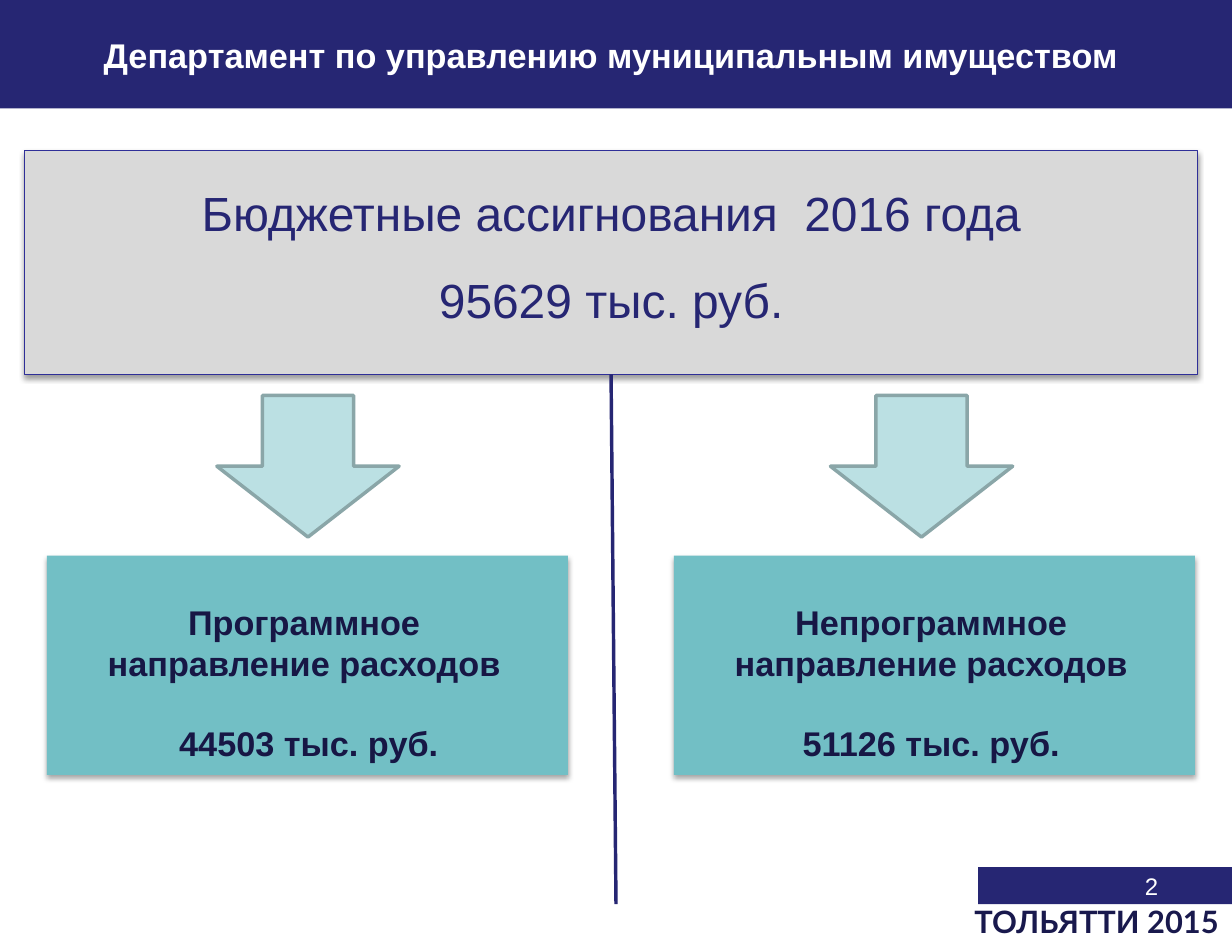
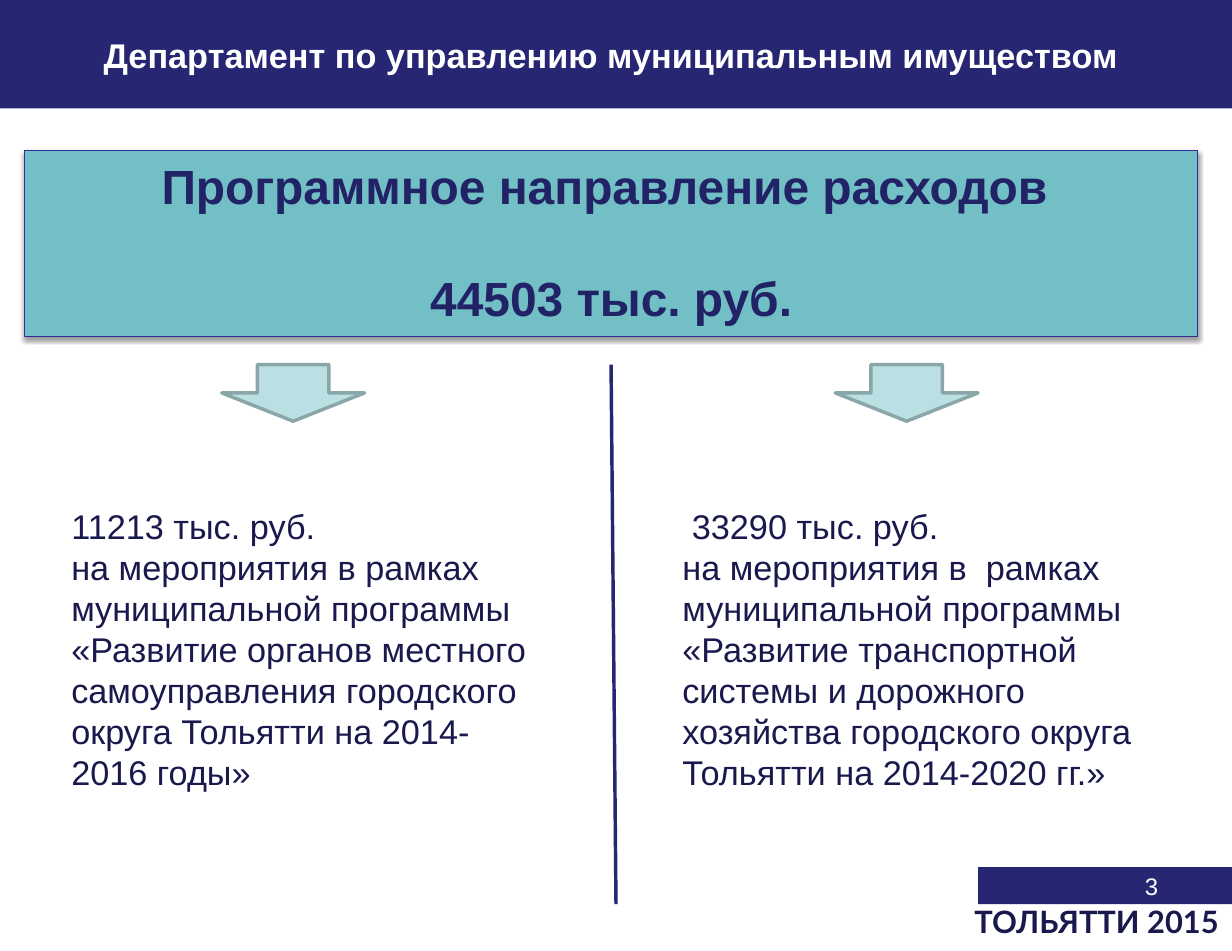
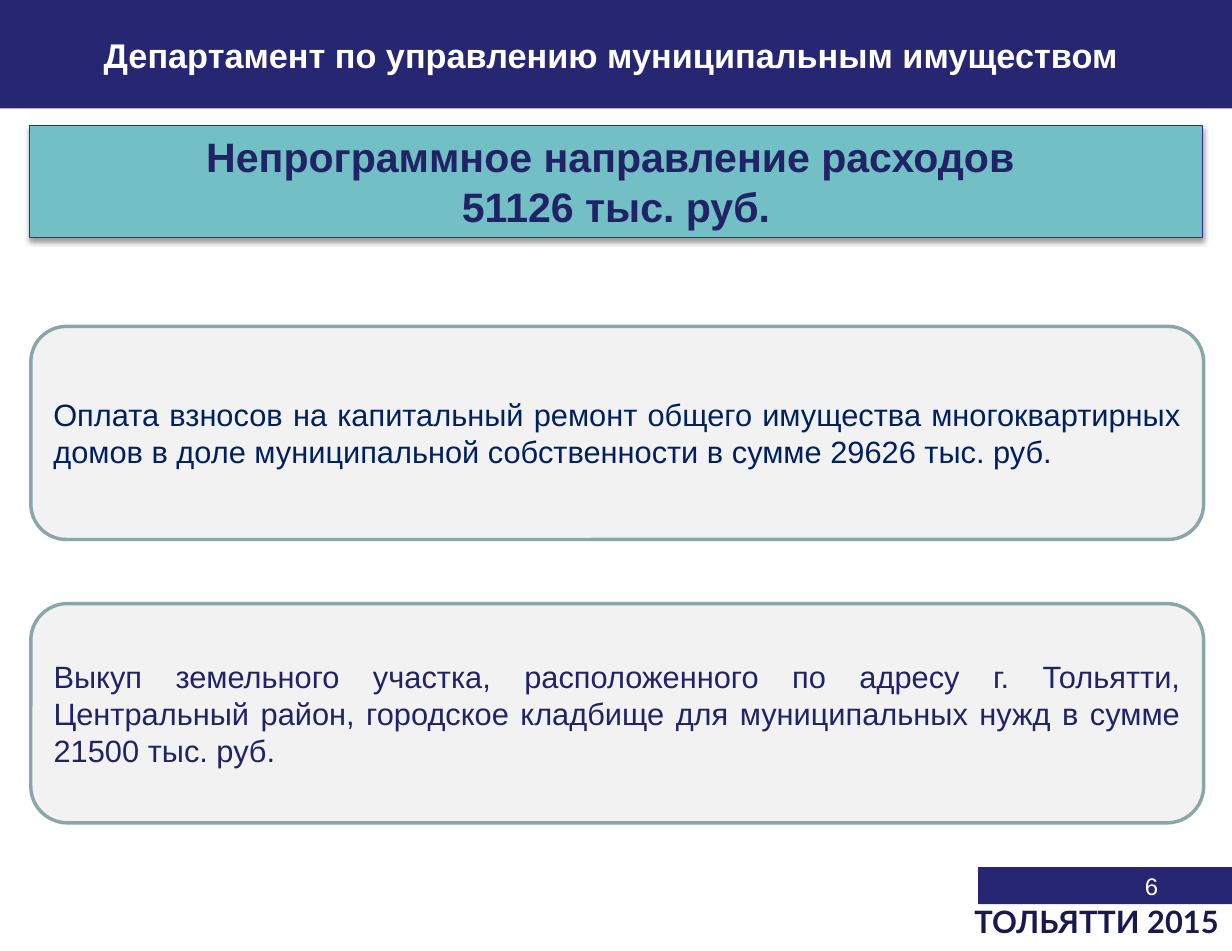
import pptx
import pptx.util
import pptx.dml.color
import pptx.enum.shapes
import pptx.enum.text
from lxml import etree

KIND = pptx.enum.shapes.MSO_SHAPE
ALIGN = pptx.enum.text.PP_ALIGN
ANCHOR = pptx.enum.text.MSO_ANCHOR
Inches = pptx.util.Inches
Pt = pptx.util.Pt

NAVY, TEAL, ICE, STEEL = "262673", "72BFC5", "BBE0E3", "8AA6A8"
EDGE, INK, DARK, HEAD = "2F2F98", "19194D", "171745", "222267"
GREY, PALE, BLUE, WHITE = "D9D9D9", "F2F2F2", "002060", "FFFFFF"

W, H = 10, 7.72
SIDE, WIDE = 0.2, 9.52
MID = SIDE + WIDE / 2
STEP = 4.98  # distance between the arrows of the two columns
FOOT = 7.34  # lower edge of the page-number band

TITLE = "Департамент по управлению муниципальным имуществом"
MARK = "ТОЛЬЯТТИ 2015"
TOTAL = ["Бюджетные ассигнования  2016 года", "95629 тыс. руб."]
PARTS = [
    (0.38, ["Программное", "направление расходов", " 44503 тыс. руб."]),
    (5.47, ["Непрограммное", "направление расходов", "51126 тыс. руб."]),
]
PROGRAM = ["Программное направление расходов ", "44503 тыс. руб."]
PLANS = [
    (0.48, 3.16, [
        "11213 тыс. руб.",
        "на мероприятия в рамках муниципальной программы «Развитие органов "
        "местного самоуправления городского округа Тольятти на 2014-2016 годы»",
    ]),
    (5.44, 2.93, [
        " 33290 тыс. руб.",
        "на мероприятия в  рамках муниципальной программы «Развитие "
        "транспортной системы и дорожного хозяйства городского округа "
        "Тольятти на 2014-2020 гг.»",
    ]),
]
OTHER = ["Непрограммное направление расходов ", "51126 тыс. руб."]
COSTS = [
    (2.65, 1.73, BLUE,
     "Оплата взносов на капитальный ремонт общего имущества многоквартирных "
     "домов в доле муниципальной собственности в сумме 29626 тыс. руб."),
    (4.9, 1.78, HEAD,
     "Выкуп земельного участка, расположенного по адресу г. Тольятти, "
     "Центральный район, городское кладбище для муниципальных нужд в сумме "
     "21500 тыс. руб."),
]


def paint(color, value):
    """Set a fill, line or font colour from a hex string."""
    color.rgb = pptx.dml.color.RGBColor.from_string(value)


def effect(shape, blur=0, dist=0, alpha=0):
    """Give the shape a soft shadow below, or none when blur is 0."""
    ns = "http://schemas.openxmlformats.org/drawingml/2006/main"
    inner = ""
    if blur:
        inner = (f'<a:outerShdw blurRad="{Pt(blur)}" dist="{Pt(dist)}" dir="5400000" '
                 f'rotWithShape="0"><a:srgbClr val="000000">'
                 f'<a:alpha val="{alpha * 1000}"/></a:srgbClr></a:outerShdw>')
    props = shape._element.spPr
    for old in props.findall(f"{{{ns}}}effectLst"):
        props.remove(old)
    props.append(etree.fromstring(f'<a:effectLst xmlns:a="{ns}">{inner}</a:effectLst>'))


def write(shape, lines, size=20, color=INK, bold=False, font="Arial",
          align=ALIGN.LEFT, anchor=ANCHOR.TOP, pad=(0.1, 0.05, 0.1, 0.05),
          pitch=None, gap=0):
    """Fill a shape with paragraphs; gap is the space before the last one."""
    frame = shape.text_frame
    frame.word_wrap = True
    frame.vertical_anchor = anchor
    (frame.margin_left, frame.margin_top,
     frame.margin_right, frame.margin_bottom) = map(Inches, pad)
    for i, line in enumerate(lines):
        para = frame.add_paragraph() if i else frame.paragraphs[0]
        para.alignment = align
        if pitch:
            para.line_spacing = pitch
        if gap and i == len(lines) - 1:
            para.space_before = Pt(gap)
        run = para.add_run()
        run.text = line
        run.font.name, run.font.size, run.font.bold = font, Pt(size), bold
        paint(run.font.color, color)


def block(slide, at, fill, kind=KIND.RECTANGLE, line=None, weight=2, shade=None):
    shape = slide.shapes.add_shape(kind, *map(Inches, at))
    shape.shadow.inherit = False
    shape.fill.solid()
    paint(shape.fill.fore_color, fill)
    if line:
        paint(shape.line.color, line)
        shape.line.width = Pt(weight)
    else:
        shape.line.fill.background()
    if shade:
        effect(shape, *shade)
    return shape


def label(slide, at, lines, **style):
    write(slide.shapes.add_textbox(*map(Inches, at)), lines, **style)


def banner(slide, at, lines, fill=TEAL, **style):
    shape = block(slide, at, fill, line=EDGE, weight=0.75, shade=(3.1, 1.6, 38))
    write(shape, lines, align=ALIGN.CENTER, **style)
    return shape


def split(slide, top, box=None):
    """Draw the line between the columns, from the box if there is one."""
    line = slide.shapes.add_connector(
        pptx.enum.shapes.MSO_CONNECTOR.STRAIGHT,
        *map(Inches, (MID, top, W / 2, FOOT)))
    paint(line.line.color, NAVY)
    line.line.width = Pt(2)
    effect(line)
    if box:
        line.begin_connect(box, 2)


def arrows(slide, mid, top, wide, high):
    for col in range(2):
        left = mid + col * STEP - wide / 2
        block(slide, (left, top, wide, high), ICE, KIND.DOWN_ARROW, line=STEEL)


def page(deck, number):
    """Add a slide with the title band and the footer."""
    slide = deck.slides.add_slide(deck.slide_layouts[6])
    block(slide, (7.94, FOOT - 0.3, W - 7.94, 0.3), NAVY)
    label(slide, (7.17, 7.03, 2.33, 0.54), [number], size=14, color=WHITE,
          align=ALIGN.RIGHT)
    write(block(slide, (0, 0, W, 0.88), NAVY), [TITLE], color=WHITE, bold=True,
          align=ALIGN.CENTER, anchor=ANCHOR.MIDDLE, pad=(0.1, 0.12, 0.18, 0.05),
          pitch=0.8)
    label(slide, (7.81, FOOT, 2.21, 0.35), [MARK], size=18, bold=True,
          font="Lato", pitch=0.8)
    return slide


def budget(deck):
    slide = page(deck, "2")
    box = banner(slide, (SIDE, 1.22, WIDE, 1.82), TOTAL, GREY, size=28, color=NAVY,
                 pad=(0.1, 0.36, 0.1, 0.05), pitch=0.8, gap=24)
    split(slide, 3.04, box)
    arrows(slide, 2.5, 3.21, 1.48, 1.15)
    for left, lines in PARTS:
        part = block(slide, (left, 4.51, 4.23, 1.78), TEAL, shade=(3.1, 1.8, 35))
        write(part, lines, color=DARK, bold=True, align=ALIGN.CENTER,
              pad=(0.1, 0.37, 0.15, 0.05), gap=23)


def program(deck):
    slide = page(deck, "3")
    banner(slide, (SIDE, 1.22, WIDE, 1.51), PROGRAM, size=28, color=HEAD,
           bold=True, gap=32)
    split(slide, 2.96)
    arrows(slide, 2.38, 2.96, 1.16, 0.46)
    for left, high, lines in PLANS:
        label(slide, (left, 3.82, 4.05, high), lines, pad=(0.1, 0.28, 0.1, 0.05))


def other(deck):
    slide = page(deck, "6")
    banner(slide, (0.24, 1.02, WIDE, 0.91), OTHER, size=24, color=HEAD, bold=True)
    for top, high, color, text in COSTS:
        cost = block(slide, (0.25, top, WIDE, high), PALE, KIND.ROUNDED_RECTANGLE,
                     line=STEEL)
        write(cost, [text], size=18, color=color, align=ALIGN.JUSTIFY,
              anchor=ANCHOR.MIDDLE)


def main():
    deck = pptx.Presentation()
    deck.slide_width, deck.slide_height = Inches(W), Inches(H)
    for build in (budget, program, other):
        build(deck)
    deck.save("out.pptx")


if __name__ == "__main__":
    main()
